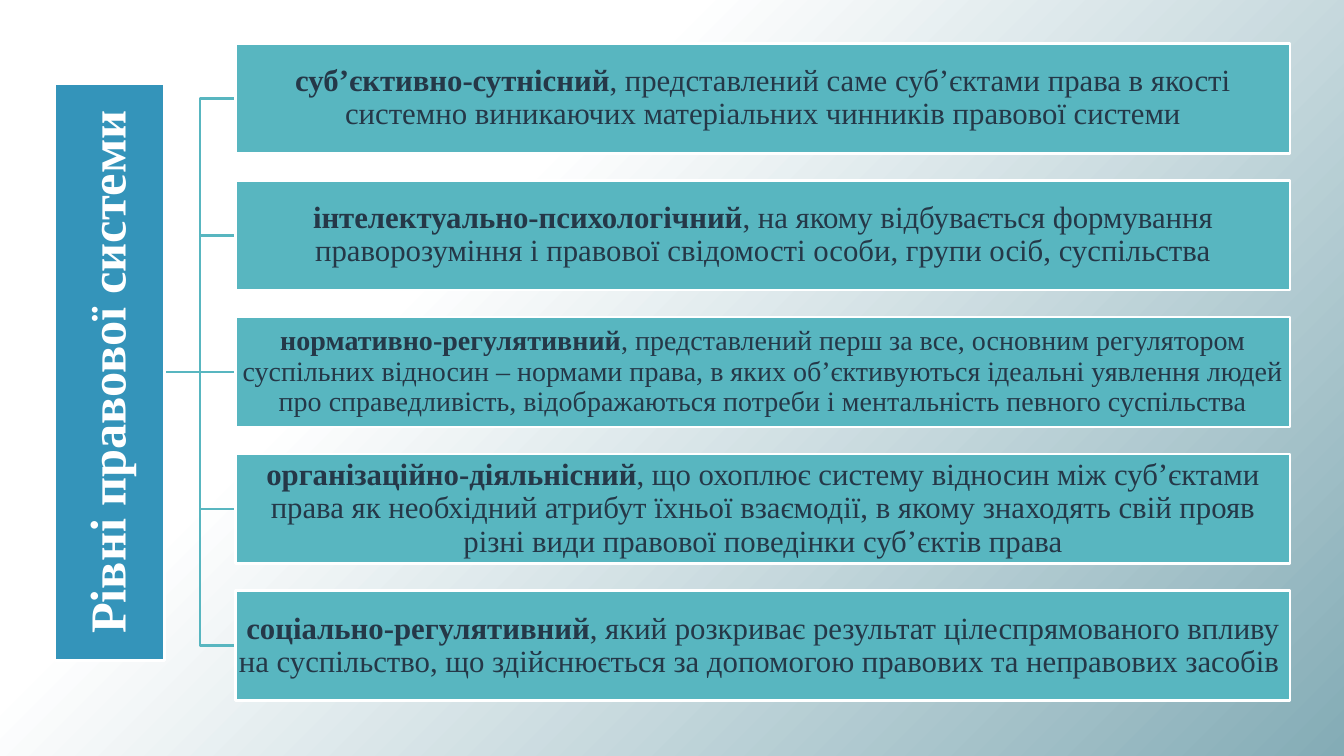
from pptx import Presentation
from pptx import util as u
from pptx.dml.color import RGBColor
from pptx.enum import shapes, text
from pptx.oxml import parse_xml
from pptx.oxml.ns import nsdecls

WHITE = RGBColor(0xFF, 0xFF, 0xFF)
MIST = RGBColor(0x84, 0xAC, 0xB6)
BLUE = RGBColor(0x34, 0x94, 0xBA)
TEAL = RGBColor(0x58, 0xB6, 0xC0)
NAVY = RGBColor(0x25, 0x38, 0x48)

TITLE = "Рівні правової системи"
# Bold term, explanation, text size, inset in cm
LEVELS = [
    ("суб’єктивно-сутнісний", ", представлений саме суб’єктами права в якості "
     "системно виникаючих матеріальних чинників правової системи", 22, 0.05),
    ("інтелектуально-психологічний", ", на якому відбувається формування "
     "праворозуміння і правової свідомості особи, групи осіб, суспільства", 22, 0.05),
    ("нормативно-регулятивний", ", представлений перш за все, основним регулятором "
     "суспільних відносин – нормами права, в яких об’єктивуються ідеальні уявлення "
     "людей про справедливість, відображаються потреби і ментальність певного "
     "суспільства", 20, 0.03),
    ("організаційно-діяльнісний", ", що охоплює систему відносин між суб’єктами "
     "права як необхідний атрибут їхньої взаємодії, в якому знаходять свій прояв "
     "різні види правової поведінки суб’єктів права", 22, 0.05),
    ("соціально-регулятивний", ", який розкриває результат цілеспрямованого впливу "
     "на суспільство, що здійснюється за допомогою правових та неправових засобів ",
     22, 0.05),
]

HIGH = 2.77
STEP = 3.45
TOP = 1.09
LEFT = 5.94
WIDE = 26.57
STEM = 4.14
SPAN = 14.53
MID = TOP + 2 * STEP + HIGH / 2


def apply(item, values):
    for name, value in values.items():
        setattr(item, name, value)


class Chart:
    font = "Times New Roman"
    width = u.Pt(2)

    def __init__(self, slide):
        self.slide = slide

    def shade(self, start, end):
        """Fill the background diagonally, plain up to a third of the way."""
        fill = self.slide.background.fill
        fill.gradient()
        fill.gradient_angle = 315
        for stop, place, color in zip(fill.gradient_stops, (0.33, 1), (start, end)):
            stop.position = place
            stop.color.rgb = color

    def stroke(self, shape, color):
        shape.line.color.rgb = color
        shape.line.width = self.width

    def link(self, x, y, end_x, end_y, color):
        """Join two points, with a bend halfway if their heights differ."""
        x, y, end_x, end_y = map(u.Cm, (x, y, end_x, end_y))
        if y == end_y:
            line = self.slide.shapes.add_connector(
                shapes.MSO_CONNECTOR.STRAIGHT, x, y, end_x, end_y)
            line._element.spPr.append(parse_xml(f"<a:effectLst {nsdecls('a')}/>"))
        else:
            bend = (x + end_x) // 2
            path = self.slide.shapes.build_freeform(x, y)
            path.add_line_segments([(bend, y), (bend, end_y), (end_x, end_y)],
                                   close=False)
            line = path.convert_to_shape()
            line.fill.background()
            line.shadow.inherit = False
        self.stroke(line, color)

    def box(self, place, fill, runs, size, color, inset, turn=0):
        """Draw a bordered box; runs are pairs of text and boldness."""
        shape = self.slide.shapes.add_shape(
            shapes.MSO_SHAPE.RECTANGLE, *map(u.Cm, place))
        shape.rotation = turn
        shape.shadow.inherit = False
        shape.fill.solid()
        shape.fill.fore_color.rgb = fill
        self.stroke(shape, WHITE)
        frame = shape.text_frame
        apply(frame, {"word_wrap": True, "vertical_anchor": text.MSO_ANCHOR.MIDDLE})
        apply(frame, {f"margin_{side}": u.Cm(inset)
                      for side in ("left", "top", "right", "bottom")})
        para = frame.paragraphs[0]
        apply(para, {"alignment": text.PP_ALIGN.CENTER, "line_spacing": 0.9})
        for words, bold in runs:
            run = para.add_run()
            run.text = words
            apply(run.font, {"name": self.font, "size": u.Pt(size), "bold": bold})
            run.font.color.rgb = color


def main():
    deck = Presentation()
    apply(deck, {"slide_width": u.Cm(33.87), "slide_height": u.Cm(19.05)})
    chart = Chart(deck.slides.add_slide(deck.slide_layouts[6]))
    chart.shade(WHITE, MIST)

    tops = [TOP + STEP * i for i in range(len(LEVELS))]
    for top in tops:
        chart.link(STEM, MID, LEFT, top + HIGH / 2, TEAL)

    place = (STEM - (SPAN + HIGH) / 2, MID - HIGH / 2, SPAN, HIGH)
    chart.box(place, BLUE, [(TITLE, True)], 36, WHITE, 0.08, turn=270)
    for top, (term, rest, size, inset) in zip(tops, LEVELS):
        chart.box((LEFT, top, WIDE, HIGH), TEAL, [(term, True), (rest, False)],
                  size, NAVY, inset)

    deck.save("out.pptx")


if __name__ == "__main__":
    main()
